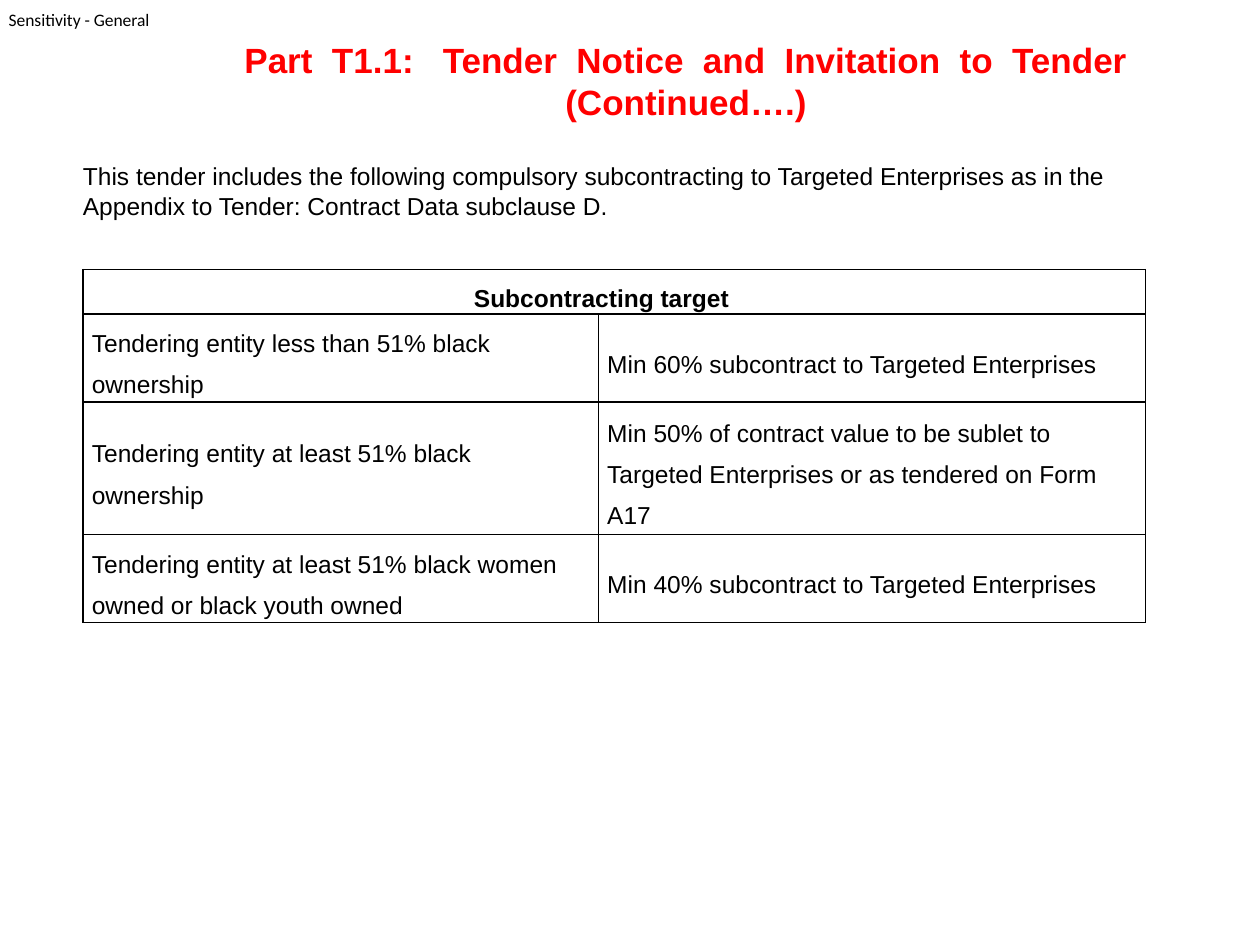
from lxml import etree
from pptx import Presentation
from pptx.dml.color import RGBColor
from pptx.enum.text import MSO_ANCHOR, PP_ALIGN
from pptx.oxml.ns import qn
from pptx.util import Pt

CENTER = PP_ALIGN.CENTER
LEFT = PP_ALIGN.LEFT
MIDDLE = MSO_ANCHOR.MIDDLE
BLACK = "000000"
RED = "FF0000"

TARGETS = [
    ("Tendering entity less than 51% black ownership",
     "Min 60% subcontract to Targeted Enterprises"),
    ("Tendering entity at least 51% black ownership",
     "Min 50% of contract value to be sublet to Targeted Enterprises or as tendered on Form A17"),
    ("Tendering entity at least 51% black women owned or black youth owned",
     "Min 40% subcontract to Targeted Enterprises"),
]


def rgb(value):
    return RGBColor.from_string(value)


def set_text(tf, text, size, color=BLACK, bold=False, align=LEFT, font="Arial"):
    p = tf.paragraphs[0]
    p.text = text
    p.alignment = align
    p.font.name = font
    p.font.size = Pt(size)
    p.font.bold = bold
    p.font.color.rgb = rgb(color)
    return p


def add_text(slide, box, text, size, inset=(7.2, 3.6), **style):
    tf = slide.shapes.add_textbox(*map(Pt, box)).text_frame
    tf.word_wrap = True
    tf.margin_left = tf.margin_right = Pt(inset[0])
    tf.margin_top = tf.margin_bottom = Pt(inset[1])
    set_text(tf, text, size, **style)


def add_borders(cell):
    tc_pr = cell._tc.get_or_add_tcPr()
    for i, side in enumerate(("lnL", "lnR", "lnT", "lnB")):
        ln = etree.Element(qn("a:" + side), w=str(Pt(1)))
        fill = etree.SubElement(ln, qn("a:solidFill"))
        etree.SubElement(fill, qn("a:srgbClr"), val=BLACK)
        tc_pr.insert(i, ln)


def fill_cell(cell, text, **style):
    cell.vertical_anchor = MIDDLE
    cell.margin_left = cell.margin_right = Pt(5)
    cell.margin_top = cell.margin_bottom = 0
    p = set_text(cell.text_frame, text, 14, **style)
    p.line_spacing = 1.5


def add_targets(slide, box):
    rows = [("Subcontracting target", "")] + TARGETS
    table = slide.shapes.add_table(len(rows), 2, *map(Pt, box)).table
    table.first_row = table.horz_banding = False
    left_width = 294.5
    table.columns[0].width = Pt(left_width)
    table.columns[1].width = Pt(box[2] - left_width)
    for row, lines in zip(table.rows, (1, 2, 3, 2)):
        row.height = Pt(25.1 * lines)
    for row, texts in zip(table.rows, rows):
        for cell, text in zip(row.cells, texts):
            cell.fill.background()
            add_borders(cell)
            if text:
                fill_cell(cell, text)
    heading = table.cell(0, 0)
    heading.merge(table.cell(0, 1))
    fill_cell(heading, rows[0][0], bold=True, align=CENTER)
    heading.margin_right = Pt(19.5)


def build_slide(prs):
    slide = prs.slides.add_slide(prs.slide_layouts[6])
    add_text(slide, (5, 5, 83, 12), "Sensitivity - General", 10,
             inset=(0, 0), font="Calibri")
    add_text(slide, (118.8, 18.7, 546.5, 55.4),
             "Part  T1.1:   Tender  Notice  and  Invitation  to  Tender (Continued….)",
             20, color=RED, bold=True, align=CENTER)
    add_text(slide, (40.3, 88.6, 640, 41),
             "This tender includes the following compulsory subcontracting to Targeted "
             "Enterprises as in the Appendix to Tender: Contract Data subclause D.", 14)
    add_targets(slide, (47.5, 154.1, 607, 200.8))


def main():
    prs = Presentation()
    prs.slide_width, prs.slide_height = Pt(720), Pt(540)
    build_slide(prs)
    prs.save("out.pptx")


if __name__ == "__main__":
    main()
